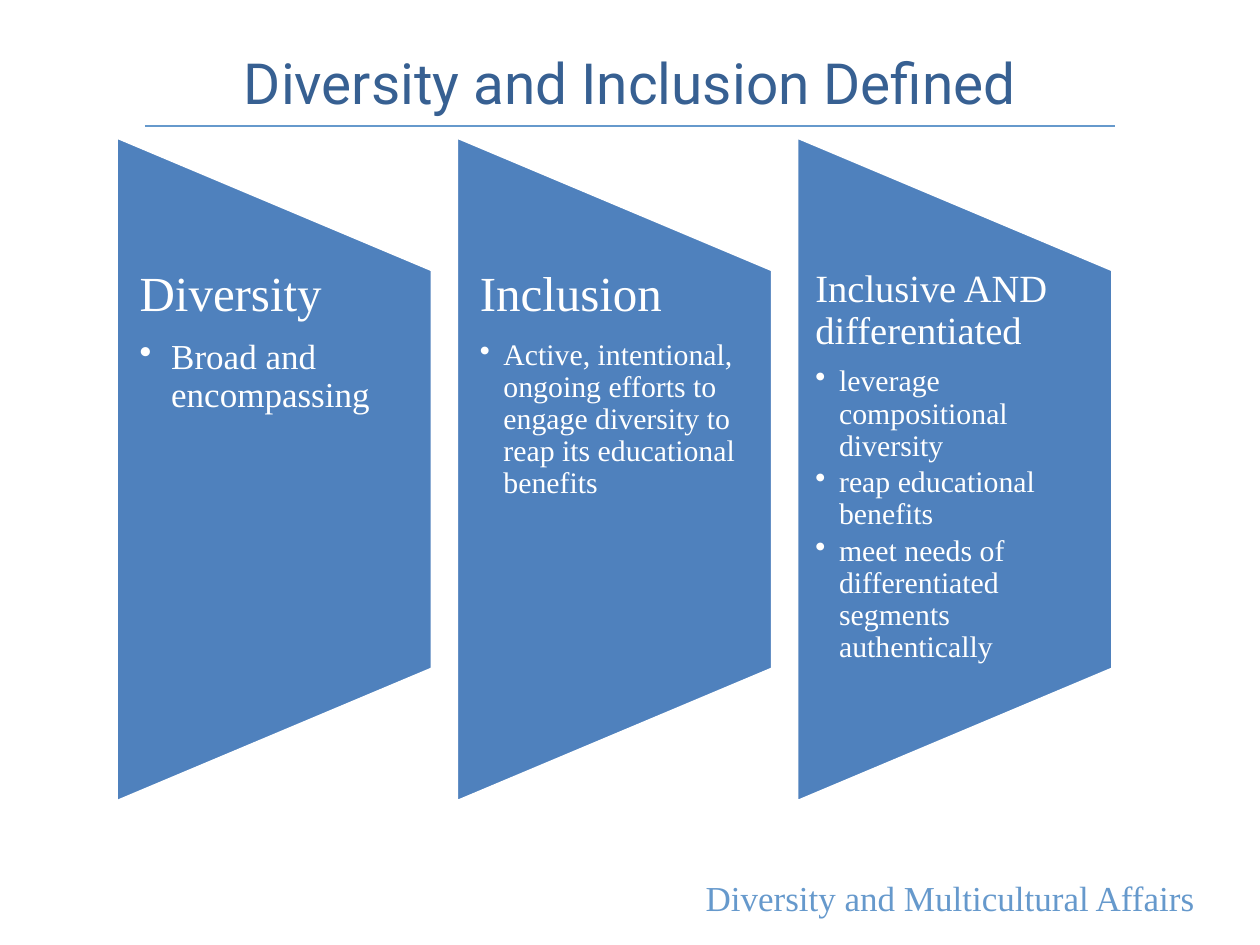
from dataclasses import dataclass

import pptx
import pptx.dml.color
import pptx.enum.shapes
import pptx.enum.text
import pptx.oxml.ns
import pptx.util
from lxml import etree

Pt = pptx.util.Pt
RGBColor = pptx.dml.color.RGBColor
Align = pptx.enum.text.PP_ALIGN
Anchor = pptx.enum.text.MSO_ANCHOR
qn = pptx.oxml.ns.qn


@dataclass(frozen=True)
class Theme:
    title_font: str = "Roboto"
    body_font: str = "Times New Roman"
    title_color: RGBColor = RGBColor(0x37, 0x60, 0x92)
    accent: RGBColor = RGBColor(0x66, 0x99, 0xCC)
    panel: RGBColor = RGBColor(0x4F, 0x81, 0xBD)
    white: RGBColor = RGBColor(0xFF, 0xFF, 0xFF)
    title_size: float = 32.4
    footer_size: float = 20
    heading_large: float = 28
    heading_small: float = 22
    bullet_large: float = 20
    bullet_small: float = 17


THEME = Theme()

PANEL_LEFT, PANEL_PITCH = 66.4, 194.4
PANEL_WIDTH, PANEL_HEIGHT = 180.7, 380.2
PANEL_MIDDLE = 268.2
TEXT_TOP, TEXT_HEIGHT = 154.1, 228.2

# heading, heading size, bullets, bullet size, bullet indent, side inset
PANELS = [
    ("Diversity", THEME.heading_large,
     ["Broad and encompassing"], THEME.bullet_large, 18, 13.4),
    ("Inclusion", THEME.heading_large,
     ["Active, intentional, ongoing efforts to engage diversity "
      "to reap its educational benefits"], THEME.bullet_small, 13.5, 13.4),
    ("Inclusive AND differentiated", THEME.heading_small,
     ["leverage compositional diversity", "reap educational benefits",
      "meet needs of differentiated segments authentically"],
     THEME.bullet_small, 13.5, 10.8),
]


def set_font(paragraph, name, size, color):
    paragraph.font.name = name
    paragraph.font.size = Pt(size)
    paragraph.font.color.rgb = color


def add_text_frame(slide, left, top, width, height, side_inset=7.2, end_inset=3.6):
    frame = slide.shapes.add_textbox(Pt(left), Pt(top), Pt(width), Pt(height)).text_frame
    frame.word_wrap = True
    frame.margin_left = frame.margin_right = Pt(side_inset)
    frame.margin_top = frame.margin_bottom = Pt(end_inset)
    return frame


def add_line_of_text(slide, text, box, alignment, name, size, color):
    frame = add_text_frame(slide, *box)
    frame.vertical_anchor = Anchor.MIDDLE
    paragraph = frame.paragraphs[0]
    paragraph.text = text
    paragraph.alignment = alignment
    set_font(paragraph, name, size, color)


def add_rule(slide, left, right, y):
    rule = slide.shapes.add_connector(
        pptx.enum.shapes.MSO_CONNECTOR.STRAIGHT, Pt(left), Pt(y), Pt(right), Pt(y))
    rule.line.color.rgb = THEME.accent
    rule.line.width = Pt(0.75)
    etree.SubElement(rule._element.spPr, qn("a:effectLst"))


def add_bullet(paragraph, indent):
    properties = paragraph._p.get_or_add_pPr()
    properties.set("marL", str(Pt(indent)))
    properties.set("indent", str(-Pt(indent)))
    etree.SubElement(properties, qn("a:buChar")).set("char", "•")


def format_panel_paragraph(paragraph, text, size, space_share):
    """Style a paragraph, with space after given as a share of its type size."""
    paragraph.text = text
    paragraph.alignment = Align.LEFT
    paragraph.line_spacing = 0.9
    paragraph.space_after = Pt(size * space_share)
    set_font(paragraph, THEME.body_font, size, THEME.white)


def add_panel_shape(slide, left):
    """Add a trapezoid turned on its side, so its drawn size swaps."""
    center = left + PANEL_WIDTH / 2
    shape = slide.shapes.add_shape(
        pptx.enum.shapes.MSO_SHAPE.FLOWCHART_MANUAL_OPERATION,
        Pt(center - PANEL_HEIGHT / 2), Pt(PANEL_MIDDLE - PANEL_WIDTH / 2),
        Pt(PANEL_HEIGHT), Pt(PANEL_WIDTH))
    shape.rotation = 270
    shape.shadow.inherit = False
    shape.fill.solid()
    shape.fill.fore_color.rgb = THEME.panel
    shape.line.color.rgb = THEME.white
    shape.line.width = Pt(2)


def add_panel(slide, left, heading, heading_size, bullets, bullet_size, indent, inset):
    add_panel_shape(slide, left)
    frame = add_text_frame(slide, left, TEXT_TOP, PANEL_WIDTH, TEXT_HEIGHT, inset, 0)
    format_panel_paragraph(frame.paragraphs[0], heading, heading_size, 0.35)
    for text in bullets:
        paragraph = frame.add_paragraph()
        paragraph.level = 1
        add_bullet(paragraph, indent)
        format_panel_paragraph(paragraph, text, bullet_size, 0.15)


def main():
    presentation = pptx.Presentation()
    presentation.slide_width, presentation.slide_height = Pt(720), Pt(540)
    slide = presentation.slides.add_slide(presentation.slide_layouts[6])

    add_rule(slide, 82.8, 637.2, 72)
    add_line_of_text(slide, "Diversity and Multicultural Affairs",
                     (396, 496.8, 293.8, 31.7), Align.RIGHT,
                     THEME.body_font, THEME.footer_size, THEME.accent)
    add_line_of_text(slide, "Diversity and Inclusion Defined",
                     (36, 21.6, 648, 50.4), Align.CENTER,
                     THEME.title_font, THEME.title_size, THEME.title_color)
    for index, panel in enumerate(PANELS):
        add_panel(slide, PANEL_LEFT + index * PANEL_PITCH, *panel)

    presentation.save("out.pptx")


if __name__ == "__main__":
    main()
